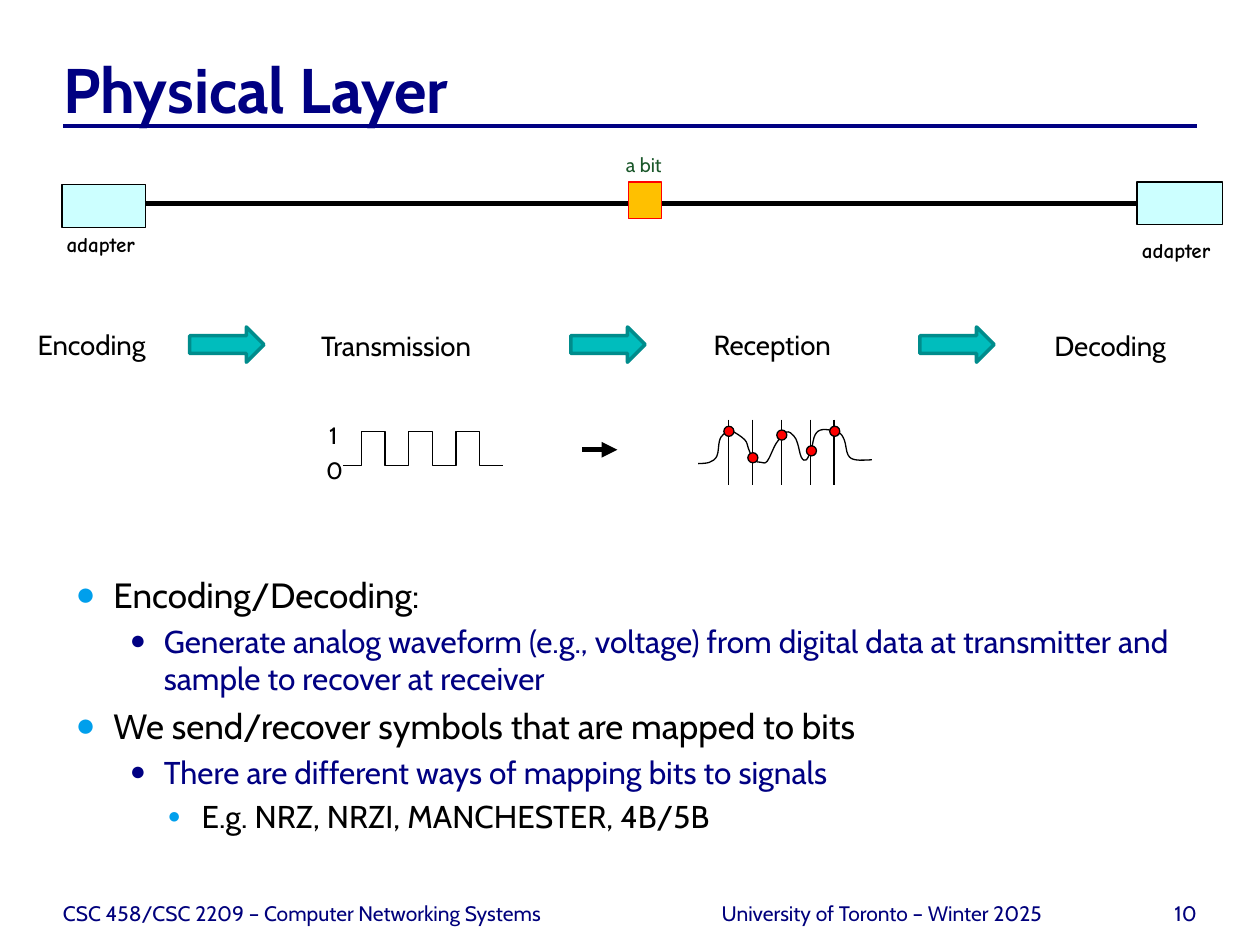
from dataclasses import dataclass

from lxml import etree
from pptx import Presentation
from pptx.dml.color import RGBColor
from pptx.enum.shapes import MSO_CONNECTOR, MSO_SHAPE
from pptx.enum.text import MSO_ANCHOR, MSO_AUTO_SIZE, PP_ALIGN
from pptx.oxml.ns import qn
from pptx.util import Inches, Pt

LEFT, CENTER, RIGHT = PP_ALIGN.LEFT, PP_ALIGN.CENTER, PP_ALIGN.RIGHT
TOP, BOTTOM = MSO_ANCHOR.TOP, MSO_ANCHOR.BOTTOM
RECTANGLE, OVAL, ARROW = MSO_SHAPE.RECTANGLE, MSO_SHAPE.OVAL, MSO_SHAPE.RIGHT_ARROW
STRAIGHT = MSO_CONNECTOR.STRAIGHT
COLORS = {
    "navy": "000082", "footer": "00007C", "black": "000000", "sky": "009FEC",
    "ice": "CCFFFF", "amber": "FFC000", "red": "FF0000", "green": "1B582B",
    "teal": "00BDBD", "dark teal": "008C8C",
}
FONT, HAND_FONT = "Cabin", "Comic Neue"
COLUMNS, ROWS = 100, 75  # square cells, ten to the inch


@dataclass
class Box:
    column: float
    row: float
    columns: float
    rows: float


@dataclass
class Label:
    text: str
    box: Box
    size: float
    color: str = "black"
    font: str = FONT
    bold: bool = False
    align: PP_ALIGN = LEFT
    anchor: MSO_ANCHOR = TOP
    inset: bool = True
    wrap: bool = True
    indent: float = 0


@dataclass
class Level:
    size: float
    color: str
    indent: float
    hanging: float
    bullet_color: str
    bullet_percent: int


LEVELS = [
    Level(20, "black", 3, 3, "sky", 95),
    Level(18, "navy", 7, 2.7, "navy", 85),
    Level(18, "black", 10, 2.7, "sky", 70),
]
BULLETS = [
    (0, "Encoding/Decoding:"),
    (1, "Generate analog waveform (e.g., voltage) from digital data at transmitter "
        "and sample to recover at receiver"),
    (0, "We send/recover symbols that are mapped to bits"),
    (1, "There are different ways of mapping bits to signals"),
    (2, "E.g. NRZ, NRZI, MANCHESTER, 4B/5B"),
]
ADAPTER = dict(size=12, font=HAND_FONT, bold=True)
STAGE = dict(size=15.75)
DIGIT = dict(size=13.5, align=CENTER, wrap=False)
FOOTER = dict(size=12, color="footer", anchor=BOTTOM, inset=False)
LABELS = [
    Label("adapter", Box(4.3, 17.9, 7.8, 3), **ADAPTER),
    Label("adapter", Box(89.65, 18.35, 7.8, 3), **ADAPTER),
    Label("a bit", Box(38.95, 11.65, 24.3, 2.9), 11.25, "green", align=CENTER),
    Label("Encoding", Box(0, 25.5, 14.5, 3.7), indent=2, **STAGE),
    Label("Transmission", Box(22.5, 25.6, 19.1, 3.7), indent=2, **STAGE),
    Label("Reception", Box(53.65, 25.5, 15.5, 3.7), indent=2, **STAGE),
    Label("Decoding", Box(82.7, 25.6, 15, 3.7), **STAGE),
    Label("1", Box(24.9, 32.9, 3.1, 3.3), **DIGIT),
    Label("0", Box(25, 35.7, 3.1, 3.3), **DIGIT),
    Label("CSC 458/CSC 2209 – Computer Networking Systems",
          Box(5, 69.5, 48.3, 4), **FOOTER),
    Label("University of Toronto – Winter 2025",
          Box(54.15, 69.5, 31.7, 4), align=CENTER, **FOOTER),
    Label("10", Box(86.7, 69.5, 8.3, 4), align=RIGHT, **FOOTER),
]
SAMPLES = [(57.8, 34.2), (59.7, 36.3), (62, 34.5), (64.35, 35.75), (66.2, 34.2)]
ANALOG = [
    (55.4, 36.8), (56.3, 36.7), (56.9, 36.2), (57.1, 35), (57.4, 34.5), (58, 34.2),
    (59.1, 34.9), (59.4, 35.6), (59.8, 36.5), (60.4, 36.7), (60.9, 36.6),
    (61.6, 35.2), (62.4, 34.3), (63, 34.6), (63.3, 35.2), (63.6, 36.3), (64, 36.5),
    (64.4, 35.6), (64.7, 34.5), (65.3, 34.1), (66.5, 34.3), (67, 34.9),
    (67.3, 36.1), (67.9, 36.5), (69.2, 36.5),
]


def grid(cells: float) -> int:
    return Inches(cells / 10)


def rgb(name: str) -> RGBColor:
    return RGBColor.from_string(COLORS[name])


def place(item, box: Box) -> None:
    item.left, item.top = grid(box.column), grid(box.row)
    item.width, item.height = grid(box.columns), grid(box.rows)


def style(paragraph, size: float, color: str, font: str = FONT, bold: bool = False) -> None:
    paragraph.font.size, paragraph.font.name = Pt(size), font
    paragraph.font.bold = bold
    paragraph.font.color.rgb = rgb(color)


def write(item, label: Label) -> None:
    place(item, label.box)
    frame = item.text_frame
    frame.text = label.text
    frame.word_wrap, frame.vertical_anchor = label.wrap, label.anchor
    frame.auto_size = MSO_AUTO_SIZE.NONE
    if not label.inset:
        frame.margin_left = frame.margin_right = 0
        frame.margin_top = frame.margin_bottom = 0
    paragraph = frame.paragraphs[0]
    paragraph.alignment = label.align
    style(paragraph, label.size, label.color, label.font, label.bold)
    if label.indent:
        paragraph._p.get_or_add_pPr().set("marL", str(grid(label.indent)))


def add_bullet(paragraph, depth: int, text: str) -> None:
    level = LEVELS[depth]
    paragraph.text, paragraph.level = text, depth
    style(paragraph, level.size, level.color)
    properties = paragraph._p.get_or_add_pPr()
    properties.set("marL", str(grid(level.indent)))
    properties.set("indent", str(-grid(level.hanging)))
    color = etree.Element(qn("a:buClr"))
    etree.SubElement(color, qn("a:srgbClr"), val=COLORS[level.bullet_color])
    size = etree.Element(qn("a:buSzPct"), val=str(level.bullet_percent * 1000))
    mark = etree.Element(qn("a:buChar"), char="●")
    for position, element in enumerate((color, size, mark)):
        properties.insert(position, element)


def add_shape(page, kind: MSO_SHAPE, box: Box, fill: str, line: str, width: float = 0.75):
    shape = page.shapes.add_shape(kind, 0, 0, 0, 0)
    place(shape, box)
    shape.shadow.inherit = False
    shape.fill.solid()
    shape.fill.fore_color.rgb = rgb(fill)
    shape.line.color.rgb, shape.line.width = rgb(line), Pt(width)
    return shape


def add_line(page, start: tuple, end: tuple, width: float, color: str = "black"):
    line = page.shapes.add_connector(STRAIGHT, *map(grid, start + end))
    line.line.color.rgb, line.line.width = rgb(color), Pt(width)
    etree.SubElement(line._element.spPr, qn("a:effectLst"))
    return line


def add_outline(page, points: list):
    corners = [(grid(x), grid(y)) for x, y in points]
    builder = page.shapes.build_freeform(*corners[0])
    builder.add_line_segments(corners[1:], close=False)
    outline = builder.convert_to_shape()
    outline.shadow.inherit = False
    outline.fill.background()
    outline.line.color.rgb, outline.line.width = rgb("black"), Pt(0.75)
    return outline


def round_off(outline) -> None:
    """Turn the straight segments into Bezier curves through the same points."""
    nodes = list(outline._element.iter(qn("a:pt")))
    points = [(int(node.get("x")), int(node.get("y"))) for node in nodes]
    padded = [points[0], *points, points[-1]]
    for node, a, b, c, d in zip(nodes[1:], padded, padded[1:], padded[2:], padded[3:]):
        segment = node.getparent()
        curve = etree.Element(qn("a:cubicBezTo"))
        leave = [q + (r - p) // 6 for p, q, r in zip(a, b, c)]
        arrive = [r - (s - q) // 6 for q, r, s in zip(b, c, d)]
        for x, y in (leave, arrive, c):
            etree.SubElement(curve, qn("a:pt"), x=str(x), y=str(y))
        segment.getparent().replace(segment, curve)


def square_wave(left: float, high: float, low: float, pulses: int) -> list:
    half = 1.88
    points = [(left, low)]
    for pulse in range(pulses):
        rise = left + 1.45 + 2 * half * pulse
        fall = rise + half
        points += [(rise, low), (rise, high), (fall, high), (fall, low)]
    return points + [(fall + half, low)]


def main() -> None:
    deck = Presentation()
    deck.slide_width, deck.slide_height = grid(COLUMNS), grid(ROWS)
    page = deck.slides.add_slide(deck.slide_layouts[1])
    title, body = page.placeholders
    write(title, Label("Physical Layer", Box(5, 3.3, 90, 6.7), 36, "navy",
                       bold=True, anchor=BOTTOM, inset=False))
    title.text_frame.margin_top = grid(0.5)
    add_line(page, (5, 10), (95, 10), 2.25, "navy")

    place(body, Box(5, 45, 90, 25))
    frame = body.text_frame
    frame.auto_size = MSO_AUTO_SIZE.NONE
    for index, (depth, text) in enumerate(BULLETS):
        add_bullet(frame.add_paragraph() if index else frame.paragraphs[0], depth, text)

    add_shape(page, RECTANGLE, Box(4.93, 14.65, 6.6, 3.4), "ice", "black")
    receiver = add_shape(page, RECTANGLE, Box(90.23, 14.45, 6.8, 3.4), "ice", "black")
    wire = add_line(page, (11.5, 16.15), (90.23, 16.15), 3)
    wire.end_connect(receiver, 1)
    add_shape(page, RECTANGLE, Box(49.9, 14.45, 2.6, 2.9), "amber", "red")

    for column in (15.05, 45.3, 73):
        add_shape(page, ARROW, Box(column, 25.95, 5.9, 2.8), "teal", "dark teal", 2)

    add_outline(page, square_wave(27.22, 34.25, 36.92, 3))
    channel = add_line(page, (46.2, 35.7), (49, 35.7), 3)
    etree.SubElement(channel.line._get_or_add_ln(), qn("a:tailEnd"), type="triangle")
    round_off(add_outline(page, ANALOG))
    for column, _ in SAMPLES:
        add_line(page, (column, 33.3), (column, 38.5), 0.75)
    for column, row in SAMPLES:
        add_shape(page, OVAL, Box(column - 0.35, row - 0.37, 0.8, 0.8), "red", "black")

    for label in LABELS:
        write(page.shapes.add_textbox(0, 0, 0, 0), label)
    deck.save("out.pptx")


if __name__ == "__main__":
    main()
